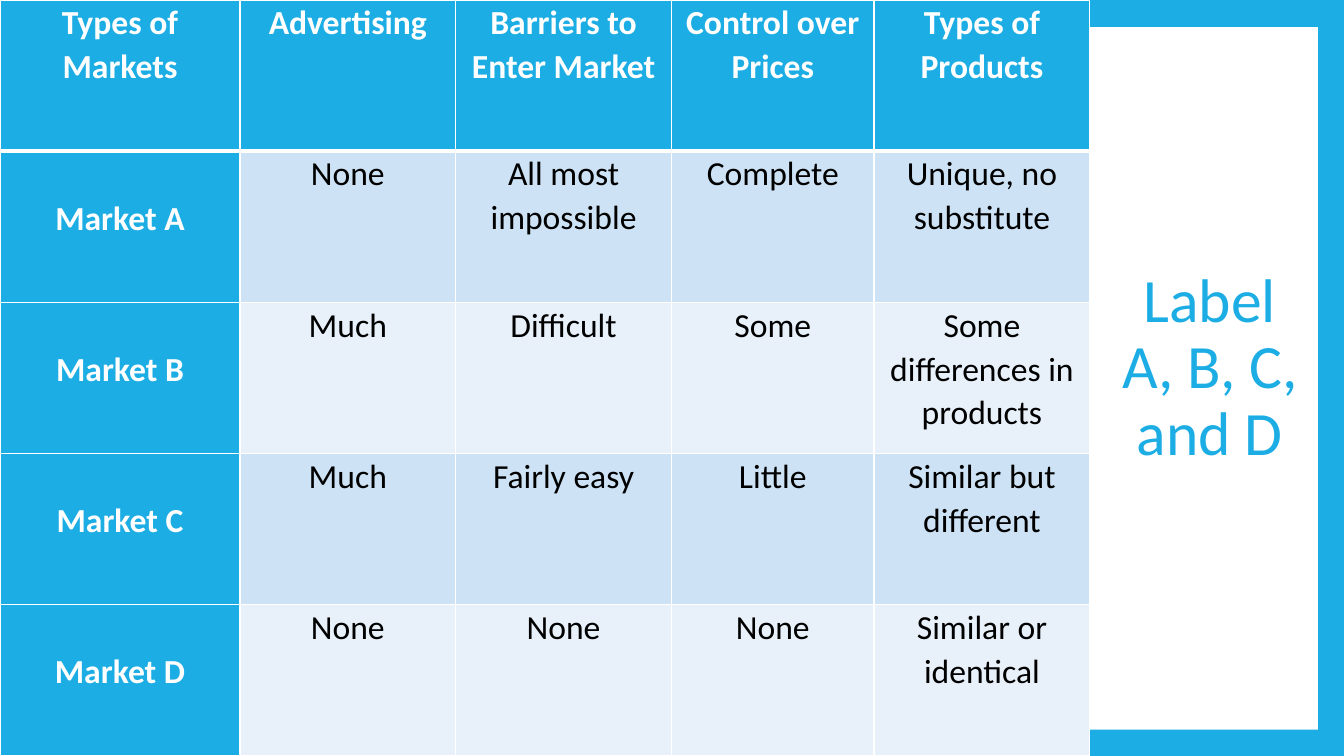
from lxml import etree
from pptx import Presentation
from pptx.dml.color import RGBColor
from pptx.enum.shapes import MSO_SHAPE
from pptx.enum.text import MSO_ANCHOR, PP_ALIGN
from pptx.oxml.ns import qn
from pptx.util import Inches, Pt

RECT = MSO_SHAPE.RECTANGLE
MIDDLE = MSO_ANCHOR.MIDDLE
CENTER = PP_ALIGN.CENTER
BLUE, WHITE, BLACK = "1CADE4", "FFFFFF", "000000"
BANDS = ["E8F1FA", "CDE3F5"]


def color(code):
    return RGBColor.from_string(code)


def write(frame, text, size=24, ink=BLACK, bold=False, gap=1.07, before=0):
    frame.word_wrap = True
    para = frame.paragraphs[0]
    para.text = text
    para.alignment = CENTER
    para.line_spacing = gap
    para.space_before = Pt(before)
    for run in para.runs:
        run.font.name = "Calibri"
        run.font.size = Pt(size)
        run.font.bold = bold
        run.font.color.rgb = color(ink)


deck = Presentation()
deck.slide_width = Inches(13.33)
deck.slide_height = Inches(7.5)
slide = deck.slides.add_slide(deck.slide_layouts[6])
slide.background.fill.solid()
slide.background.fill.fore_color.rgb = color(BLUE)

panel = slide.shapes.add_shape(RECT, Inches(0.25), Inches(0.27), Inches(12.82), Inches(6.97))
panel.shadow.inherit = False
panel.fill.solid()
panel.fill.fore_color.rgb = color(WHITE)
panel.line.fill.background()

title = slide.shapes.add_textbox(Inches(11), Inches(0.67), Inches(2), Inches(5.98))
title.text_frame.vertical_anchor = MIDDLE
write(title.text_frame, "Label\vA, B, C, and D", size=44, ink=BLUE, gap=0.9)

rows = [
    ["Types of Markets", "Advertising", "Barriers to Enter Market", "Control over Prices", "Types of Products"],
    ["Market A", "None", "All most impossible", "Complete", "Unique, no substitute"],
    ["Market B", "Much", "Difficult", "Some", "Some differences in products"],
    ["Market C", "Much", "Fairly easy", "Little", "Similar but different"],
    ["Market D", "None", "None", "None", "Similar or identical"],
]
widths = [2.38, 2.14, 2.14, 2.01, 2.14]
grid = slide.shapes.add_table(len(rows), len(widths), 0, 0, Inches(10.8), Inches(7.5)).table
for col, width in zip(grid.columns, widths):
    col.width = Inches(width)

for r, row in enumerate(rows):
    grid.rows[r].height = Inches(1.5)
    for c, text in enumerate(row):
        cell = grid.cell(r, c)
        head = r == 0 or c == 0
        cell.margin_left = cell.margin_right = Inches(0.07)
        cell.margin_top = Inches(0.44 if r and c == 0 else 0)
        cell.margin_bottom = 0
        props = cell._tc.get_or_add_tcPr()
        for side in ["lnL", "lnR", "lnT", "lnB"]:
            thick = (r, side) in [(0, "lnB"), (1, "lnT")]
            line = etree.SubElement(props, qn("a:" + side), w=str(Pt(3 if thick else 1)))
            fill = etree.SubElement(line, qn("a:solidFill"))
            etree.SubElement(fill, qn("a:srgbClr"), val=WHITE)
        cell.fill.solid()
        cell.fill.fore_color.rgb = color(BLUE if head else BANDS[r % 2])
        write(cell.text_frame, text, ink=WHITE if head else BLACK, bold=head, before=0.1)

deck.save("out.pptx")
